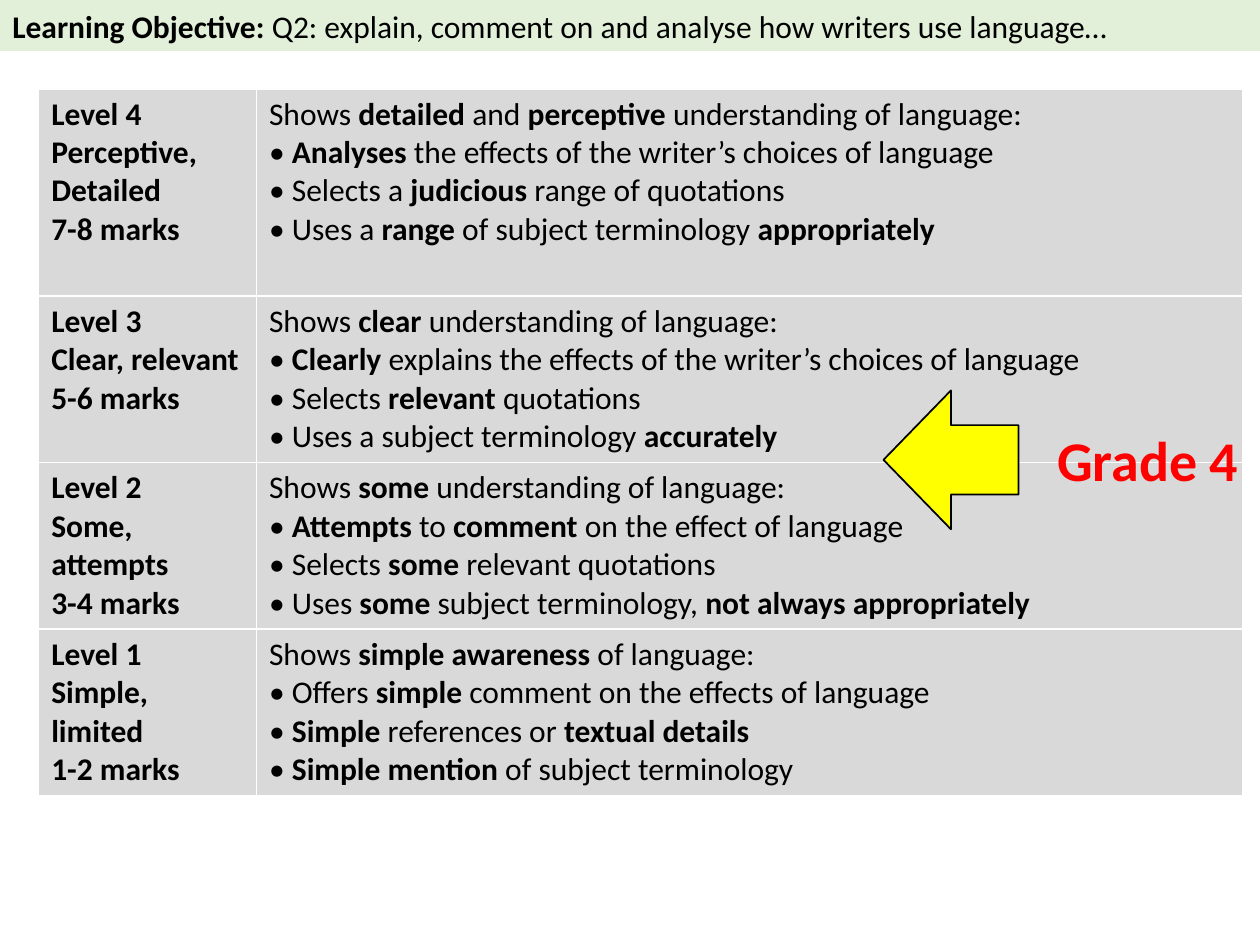
from lxml.etree import SubElement
from pptx import Presentation
from pptx.dml.color import RGBColor
from pptx.enum.shapes import MSO_SHAPE
from pptx.enum.text import MSO_ANCHOR, PP_ALIGN
from pptx.oxml.ns import qn
from pptx.util import Cm, Pt

FONT = "Calibri"
BLACK = RGBColor(0x00, 0x00, 0x00)
WHITE = RGBColor(0xFF, 0xFF, 0xFF)
RED = RGBColor(0xFF, 0x00, 0x00)
YELLOW = RGBColor(0xFF, 0xFF, 0x00)
PALE_GREEN = RGBColor(0xE2, 0xF0, 0xD9)
GREY = RGBColor(0xD9, 0xD9, 0xD9)

OBJECTIVE = ("**Learning Objective: **Q2: explain, comment on and analyse "
             "how writers use language…")

# Each level: lines of the left cell, lines of the right cell; ** marks bold.
LEVELS = [
    (["**Level 4**", "**Perceptive, Detailed**", "**7-8 marks**"],
     ["Shows **detailed** and **perceptive** understanding of language:",
      "• **Analyses** the effects of the writer’s choices of language",
      "• Selects a **judicious** range of quotations",
      "• Uses a **range** of subject terminology **appropriately**"]),
    (["**Level 3**", "**Clear, relevant**", "**5-6 marks**"],
     ["Shows **clear** understanding of language:",
      "• **Clearly** explains the effects of the writer’s choices of language",
      "• Selects **relevant **quotations",
      "• Uses a subject terminology **accurately**"]),
    (["**Level 2**", "**Some, attempts**", "**3-4 marks**"],
     ["Shows **some** understanding of language:",
      "• **Attempts** to **comment** on the effect of language",
      "• Selects **some** relevant quotations",
      "• Uses **some** subject terminology, **not always appropriately**"]),
    (["**Level 1**", "**Simple, limited**", "**1-2 marks**"],
     ["Shows **simple awareness** of language:",
      "• Offers **simple** comment on the effects of language",
      "• **Simple** references or **textual details**",
      "• **Simple mention **of subject terminology"]),
]


def write_lines(text_frame, lines, size=18, color=BLACK, align=PP_ALIGN.LEFT):
    """Write one paragraph per line, with the parts between ** in bold."""
    for index, line in enumerate(lines):
        paragraph = text_frame.paragraphs[0] if index == 0 else text_frame.add_paragraph()
        paragraph.alignment = align
        for position, text in enumerate(line.split("**")):
            if text:
                run = paragraph.add_run()
                run.text = text
                run.font.name = FONT
                run.font.size = Pt(size)
                run.font.bold = position % 2 == 1
                run.font.color.rgb = color


def set_borders(cell, color, width):
    """Draw the four cell borders, which must come before the fill in the XML."""
    properties = cell._tc.get_or_add_tcPr()
    for side in ("a:lnL", "a:lnR", "a:lnT", "a:lnB"):
        line = SubElement(properties, qn(side), w=str(Pt(width)))
        fill = SubElement(line, qn("a:solidFill"))
        SubElement(fill, qn("a:srgbClr"), val=str(color))


def add_objective_bar(slide, left, top, width, height):
    bar = slide.shapes.add_shape(MSO_SHAPE.RECTANGLE, left, top, width, height)
    bar.shadow.inherit = False
    bar.fill.solid()
    bar.fill.fore_color.rgb = PALE_GREEN
    bar.line.fill.background()
    bar.text_frame.word_wrap = True
    bar.text_frame.vertical_anchor = MSO_ANCHOR.MIDDLE
    write_lines(bar.text_frame, [OBJECTIVE])


def add_level_table(slide, left, top, width, height):
    label_width, first_height = Cm(4.39), Cm(4.18)
    table = slide.shapes.add_table(len(LEVELS), 2, left, top, width, height).table
    table.first_row = table.horz_banding = False
    table.columns[0].width = label_width
    table.columns[1].width = width - label_width
    for index, (row, level) in enumerate(zip(table.rows, LEVELS)):
        row.height = first_height if index == 0 else (height - first_height) // (len(LEVELS) - 1)
        for cell, lines in zip(row.cells, level):
            set_borders(cell, WHITE, 1)
            cell.fill.solid()
            cell.fill.fore_color.rgb = GREY
            write_lines(cell.text_frame, lines)


def add_grade_marker(slide, left, top, width, height):
    arrow = slide.shapes.add_shape(MSO_SHAPE.RIGHT_ARROW, left, top, Cm(2.72), height)
    arrow.rotation = 180
    arrow.shadow.inherit = False
    arrow.fill.solid()
    arrow.fill.fore_color.rgb = YELLOW
    arrow.line.color.rgb = BLACK
    arrow.line.width = Pt(1)

    label_left = left + Cm(1.14)
    label = slide.shapes.add_textbox(label_left, top + Cm(0.59),
                                     left + width - label_left, Cm(1.62))
    label.text_frame.word_wrap = True
    write_lines(label.text_frame, ["**Grade 4**"], 32, RED, PP_ALIGN.CENTER)


def main():
    presentation = Presentation()
    presentation.slide_width = Cm(25.4)
    presentation.slide_height = Cm(19.05)
    slide = presentation.slides.add_slide(presentation.slide_layouts[6])
    add_objective_bar(slide, 0, 0, presentation.slide_width, Cm(1.03))
    add_level_table(slide, Cm(0.78), Cm(1.79), Cm(24.28), Cm(14.08))
    add_grade_marker(slide, Cm(17.81), Cm(7.87), Cm(9.52), Cm(2.8))
    presentation.save("out.pptx")


if __name__ == "__main__":
    main()
